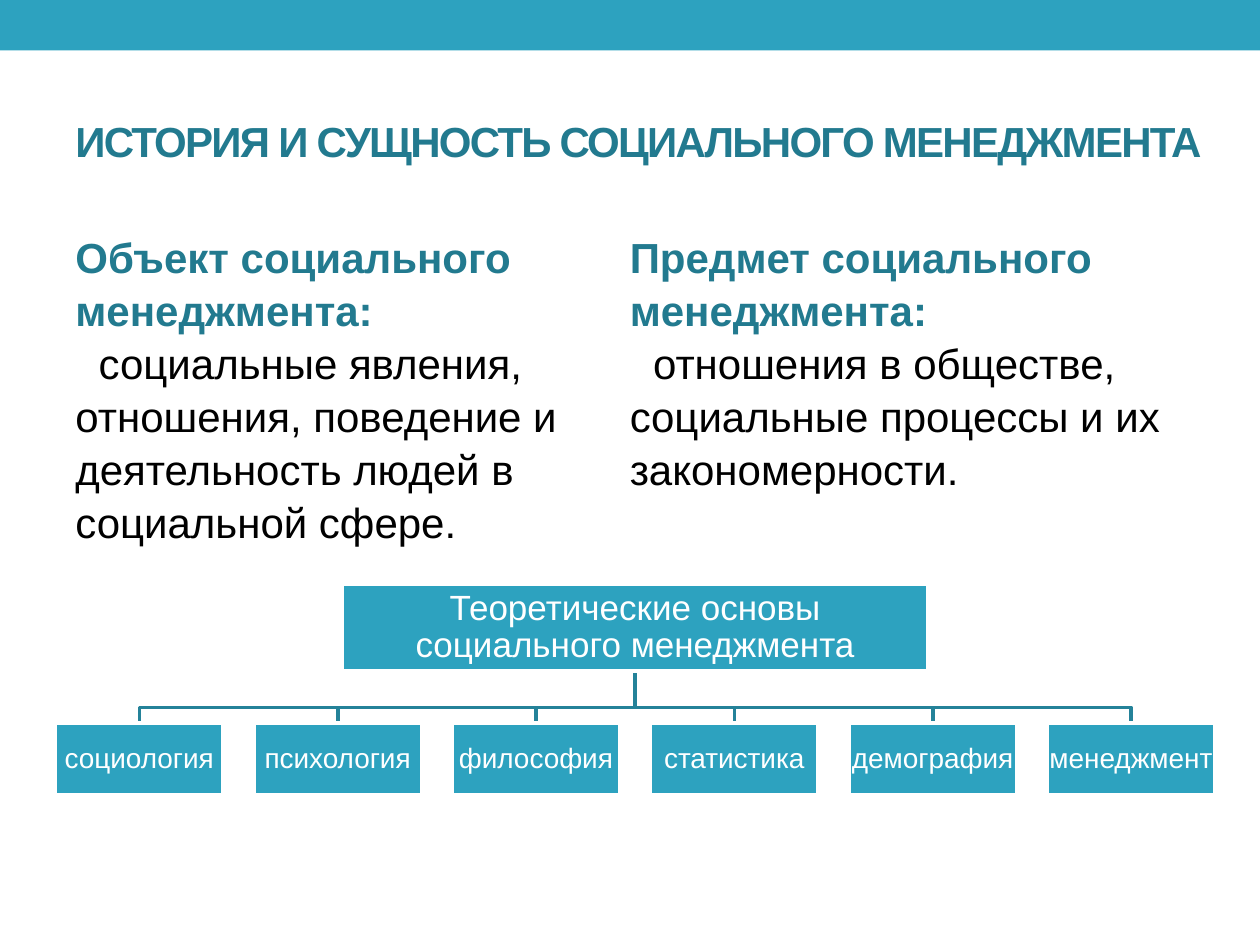
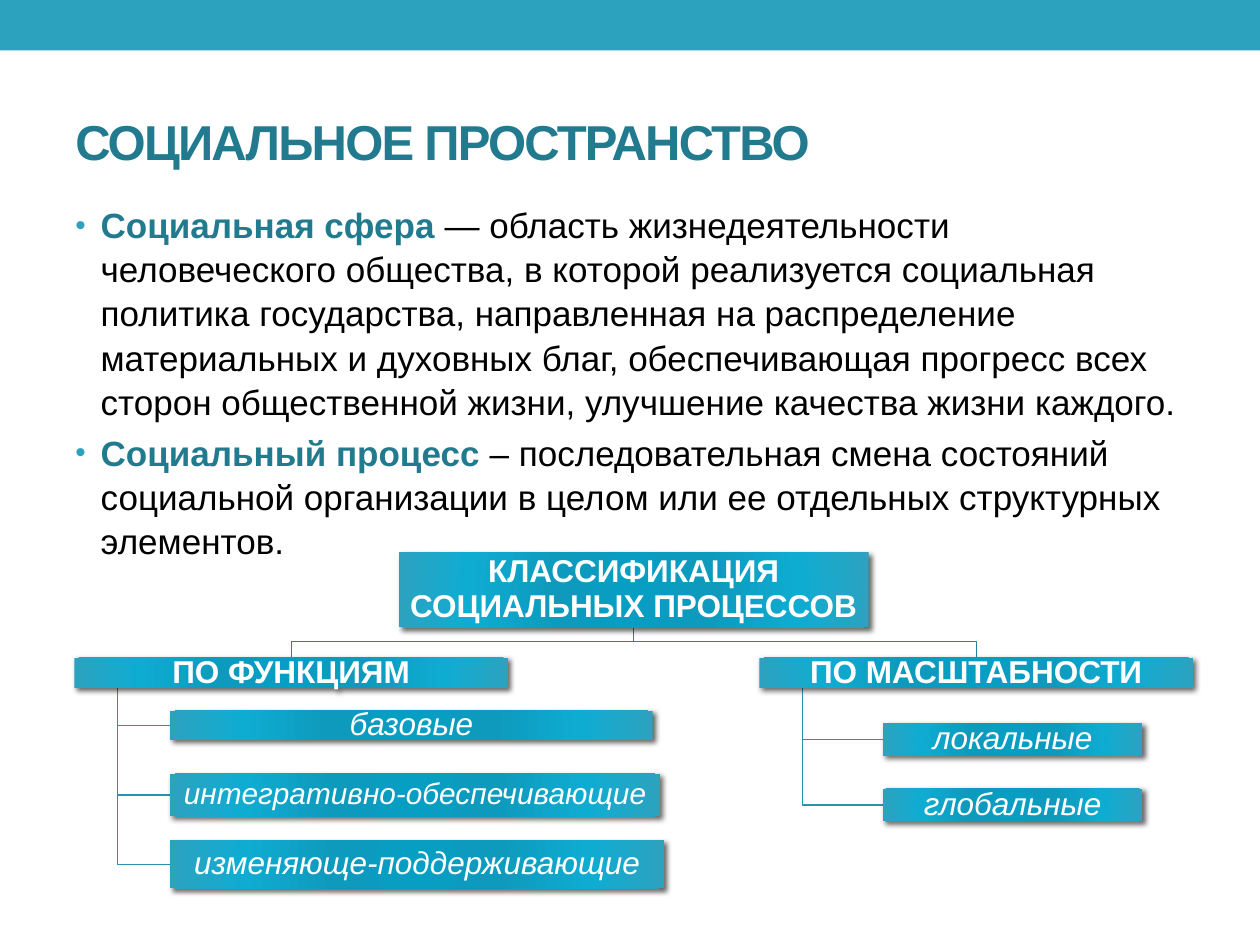
from dataclasses import dataclass

from lxml import etree
from pptx import Presentation
from pptx.dml.color import RGBColor
from pptx.enum import shapes, text
from pptx.oxml import parse_xml
from pptx.oxml.ns import nsdecls, qn
from pptx.util import Cm, Pt


@dataclass(frozen=True)
class Theme:
    font: str = "Arial"
    accent: str = "2DA2BF"
    heading: str = "227A8F"
    trunk: str = "248299"
    twig: str = "2993AD"
    body: str = "000000"
    light: str = "FFFFFF"
    gradient: tuple = ((0, "079EC3"), (34, "0E9ABD"), (70, "0FACD2"), (100, "2DA2BF"))
    large: float = 24
    medium: float = 20
    node: float = 18
    small: float = 16
    heavy_line: float = 2.08
    thin_line: float = 0.75
    body_spacing: float = 1.05
    node_spacing: float = 0.9


THEME = Theme()


@dataclass(frozen=True)
class Box:
    left: float
    top: float
    width: float
    height: float

    @property
    def center(self):
        return self.left + self.width / 2

    @property
    def middle(self):
        return self.top + self.height / 2

    @property
    def bottom(self):
        return self.top + self.height

    def lengths(self):
        return [Cm(value) for value in (self.left, self.top, self.width, self.height)]


# Shared drawing helpers
def style_font(font, size, color, bold=False, italic=False):
    font.name, font.size, font.bold, font.italic = THEME.font, Pt(size), bold, italic
    font.color.rgb = RGBColor.from_string(color)


def add_text_box(slide, box):
    frame = slide.shapes.add_textbox(*box.lengths()).text_frame
    frame.word_wrap = True
    return frame


def add_rectangle(slide, box, line=None):
    shape = slide.shapes.add_shape(shapes.MSO_SHAPE.RECTANGLE, *box.lengths())
    shape.shadow.inherit = False
    shape.fill.solid()
    shape.fill.fore_color.rgb = RGBColor.from_string(THEME.accent)
    if line:
        shape.line.color.rgb = RGBColor.from_string(line)
        shape.line.width = Pt(THEME.heavy_line)
    else:
        shape.line.fill.background()
    return shape


def write_label(shape, label, size, bold=False, italic=False):
    frame = shape.text_frame
    frame.word_wrap = True
    frame.vertical_anchor = text.MSO_ANCHOR.MIDDLE
    frame.margin_left = frame.margin_right = frame.margin_top = frame.margin_bottom = Cm(0.03)
    paragraph = frame.paragraphs[0]
    paragraph.text = label
    paragraph.alignment = text.PP_ALIGN.CENTER
    paragraph.line_spacing = THEME.node_spacing
    style_font(paragraph.font, size, THEME.light, bold, italic)


def add_polyline(slide, points, color, width):
    start, *rest = [(Cm(x), Cm(y)) for x, y in points]
    builder = slide.shapes.build_freeform(*start)
    builder.add_line_segments(rest, close=False)
    shape = builder.convert_to_shape()
    shape.shadow.inherit = False
    shape.fill.background()
    shape.line.color.rgb = RGBColor.from_string(color)
    shape.line.width = Pt(width)


def add_drop(slide, parent, child, bend, width):
    """Line from a parent's bottom to a child's top, turning at height bend."""
    points = [(parent.center, parent.bottom), (parent.center, bend),
              (child.center, bend), (child.center, child.top)]
    add_polyline(slide, points, THEME.trunk, width)


def add_glossy_node(slide, box, label, size=THEME.node, bold=False, italic=False):
    shape = add_rectangle(slide, box)
    properties = shape._element.spPr
    # Radial gradient
    stops = "".join(f'<a:gs pos="{position * 1000}"><a:srgbClr val="{color}"/></a:gs>'
                    for position, color in THEME.gradient)
    gradient = parse_xml(
        f'<a:gradFill {nsdecls("a")} rotWithShape="1"><a:gsLst>{stops}</a:gsLst>'
        '<a:path path="circle"><a:fillToRect l="100000" t="100000" r="100000" b="100000"/>'
        '</a:path></a:gradFill>')
    properties.replace(properties.find(qn("a:solidFill")), gradient)
    # Soft shadow to the lower right
    shadow = etree.SubElement(properties.find(qn("a:effectLst")), qn("a:outerShdw"),
                              blurRad=str(Pt(3)), dist=str(Pt(2)), dir="2700000",
                              algn="ctr", rotWithShape="0")
    color = etree.SubElement(shadow, qn("a:srgbClr"), val="000000")
    etree.SubElement(color, qn("a:alpha"), val="60000")
    write_label(shape, label, size, bold, italic)


# Slide frame: band and title
def add_titled_slide(presentation, title, size):
    slide = presentation.slides.add_slide(presentation.slide_layouts[6])
    add_rectangle(slide, Box(0, 0, 25.4, 1.02))
    frame = add_text_box(slide, Box(1.27, 1.47, 23.42, 2.74))
    frame.vertical_anchor = text.MSO_ANCHOR.MIDDLE
    paragraph = frame.paragraphs[0]
    run = paragraph.add_run()
    run.text = title
    style_font(run.font, size, THEME.heading, bold=True)
    run._r.get_or_add_rPr().set("spc", "-100")
    return slide


# Two columns of heading and explanation
def add_columns(slide, box, columns):
    pitch = box.width / len(columns)
    for index, (heading, explanation) in enumerate(columns):
        frame = add_text_box(slide, Box(box.left + index * pitch, box.top,
                                        pitch + 0.5, box.height))
        first, second = frame.paragraphs[0], frame.add_paragraph()
        first.text, second.text = heading, explanation
        second._p.get_or_add_pPr().set("indent", str(Cm(0.47)))
        first.line_spacing = second.line_spacing = THEME.body_spacing
        style_font(first.font, THEME.large, THEME.heading, bold=True)
        style_font(second.font, THEME.large, THEME.body)


# One root over a row of equal leaves
def add_foundations_tree(slide, box, root_label, leaf_labels):
    root_width, leaf_width, leaf_height = 11.81, 3.38, 1.45
    root = Box(box.center - root_width / 2, box.top, root_width, 1.75)
    pitch = (box.width - leaf_width) / (len(leaf_labels) - 1)
    leaves = [Box(box.left + index * pitch, box.bottom - leaf_height, leaf_width, leaf_height)
              for index in range(len(leaf_labels))]
    for leaf in leaves:
        add_drop(slide, root, leaf, box.top + 2.48, THEME.heavy_line)
    write_label(add_rectangle(slide, root, THEME.light), root_label, THEME.medium)
    for leaf, label in zip(leaves, leaf_labels):
        write_label(add_rectangle(slide, leaf, THEME.light), label, THEME.small)


# Bulleted definitions
def add_definitions(slide, box, definitions):
    frame = add_text_box(slide, box)
    for index, (term, meaning) in enumerate(definitions):
        paragraph = frame.add_paragraph() if index else frame.paragraphs[0]
        if index:
            paragraph.space_before = Pt(4)
        paragraph.line_spacing = THEME.body_spacing
        properties = paragraph._p.get_or_add_pPr()
        properties.set("marL", str(Cm(0.51)))
        properties.set("indent", str(Cm(-0.51)))
        color = etree.SubElement(properties, qn("a:buClr"))
        etree.SubElement(color, qn("a:srgbClr"), val=THEME.accent)
        etree.SubElement(properties, qn("a:buSzPct"), val="85000")
        etree.SubElement(properties, qn("a:buFont"), typeface=THEME.font)
        etree.SubElement(properties, qn("a:buChar"), char="•")
        for content, ink, bold in ((term, THEME.heading, True), (meaning, THEME.body, False)):
            run = paragraph.add_run()
            run.text = content
            style_font(run.font, THEME.medium, ink, bold)


# A branch heading with its leaves hanging from a spine
def add_branch(slide, box, heading, leaf_offset, leaves):
    spine = box.left + 0.87
    leaf_boxes = [Box(box.left + leaf_offset, box.top + top, width, height)
                  for _, top, width, height, _ in leaves]
    for leaf in leaf_boxes:
        points = [(spine, box.bottom), (spine, leaf.middle), (leaf.left, leaf.middle)]
        add_polyline(slide, points, THEME.twig, THEME.thin_line)
    add_glossy_node(slide, box, heading, bold=True)
    for leaf, (label, *_, size) in zip(leaf_boxes, leaves):
        add_glossy_node(slide, leaf, label, size, italic=True)


# Classification: root and two branches at the edges
def add_classification(slide, box, root_label, branches):
    root_width, branch_width = 9.47, 8.74
    root = Box(box.center - root_width / 2, box.top, root_width, 1.52)
    pitch = (box.width - branch_width) / (len(branches) - 1)
    for index, branch in enumerate(branches):
        branch_box = Box(box.left + index * pitch, box.top + 2.13, branch_width, 0.61)
        add_drop(slide, root, branch_box, box.top + 1.8, THEME.thin_line)
        add_branch(slide, branch_box, *branch)
    add_glossy_node(slide, root, root_label, bold=True)


def build_history_slide(presentation):
    slide = add_titled_slide(presentation, "ИСТОРИЯ И СУЩНОСТЬ СОЦИАЛЬНОГО МЕНЕДЖМЕНТА",
                             THEME.large)
    add_columns(slide, Box(1.27, 4.5, 22.35, 6.07), [
        ("Объект социального менеджмента:",
         "социальные явления, отношения, поведение и деятельность людей в социальной сфере."),
        ("Предмет социального менеджмента:",
         "отношения в обществе, социальные процессы и их закономерности."),
    ])
    add_foundations_tree(slide, Box(1.12, 11.78, 23.37, 4.25),
                         "Теоретические основы социального менеджмента",
                         ["социология", "психология", "философия",
                          "статистика", "демография", "менеджмент"])


def build_space_slide(presentation):
    slide = add_titled_slide(presentation, "СОЦИАЛЬНОЕ ПРОСТРАНСТВО", 28)
    add_definitions(slide, Box(1.27, 3.94, 22.86, 7.29), [
        ("Социальная сфера ",
         "— область жизнедеятельности человеческого общества, в которой реализуется "
         "социальная политика государства, направленная на распределение материальных "
         "и духовных благ, обеспечивающая прогресс всех сторон общественной жизни, "
         "улучшение качества жизни каждого."),
        ("Социальный процесс ",
         "– последовательная смена состояний социальной организации в целом "
         "или ее отдельных структурных элементов."),
    ])
    # Leaves: label, top below the branch top, width, height, type size
    add_classification(slide, Box(1.5, 11.13, 22.55, 6.78), "КЛАССИФИКАЦИЯ СОЦИАЛЬНЫХ ПРОЦЕССОВ", [
        ("ПО ФУНКЦИЯМ", 1.93, [
            ("базовые", 1.07, 9.73, 0.58, THEME.node),
            ("интегративно-обеспечивающие", 2.34, 9.88, 0.86, 17),
            ("изменяюще-поддерживающие", 3.68, 9.96, 0.97, THEME.node)]),
        ("ПО МАСШТАБНОСТИ", 2.49, [
            ("локальные", 1.32, 5.23, 0.66, THEME.node),
            ("глобальные", 2.64, 5.23, 0.66, THEME.node)]),
    ])


def main():
    presentation = Presentation()
    presentation.slide_width, presentation.slide_height = Cm(25.4), Cm(19.05)
    build_history_slide(presentation)
    build_space_slide(presentation)
    presentation.save("out.pptx")


if __name__ == "__main__":
    main()
